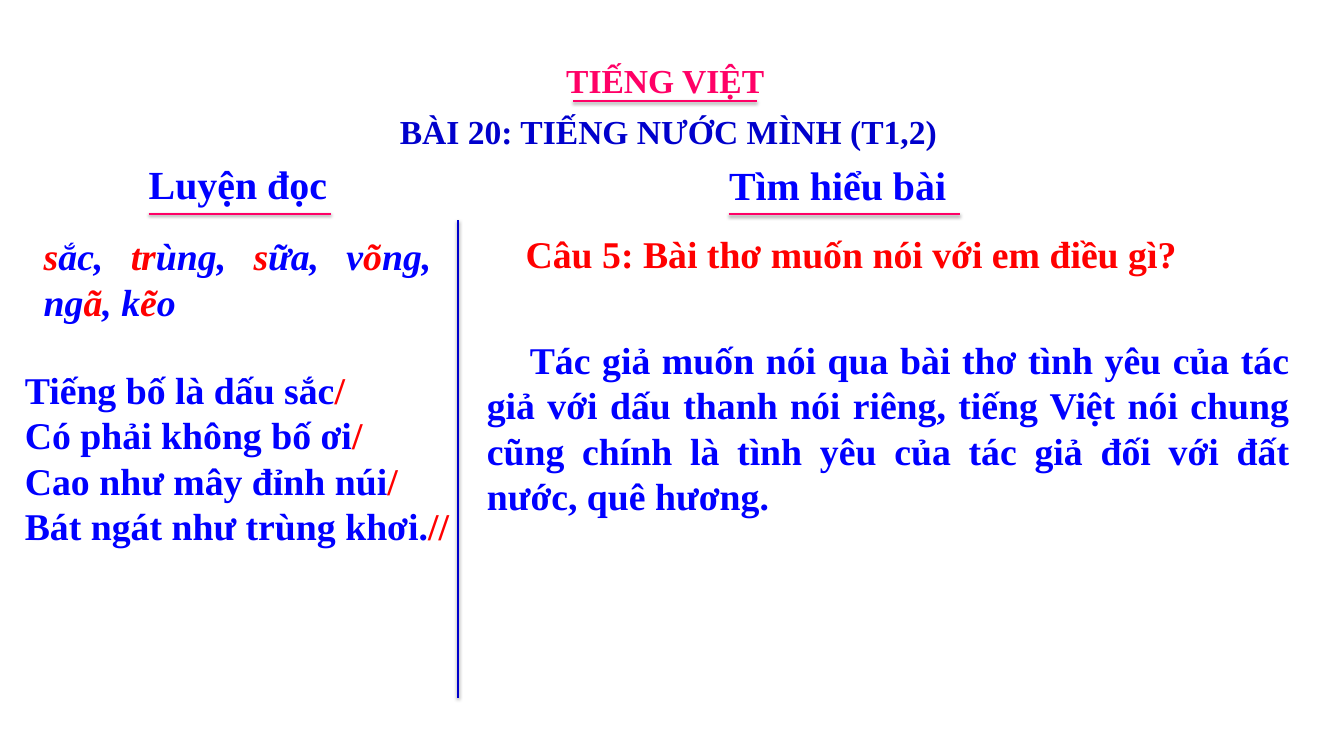
from lxml import etree
from pptx import Presentation
from pptx import util as u
from pptx.dml.color import RGBColor
from pptx.enum import shapes, text
from pptx.oxml.ns import qn

THEME = {
    "font": "Times New Roman",
    "pink": RGBColor(0xFF, 0x00, 0x66),
    "navy": RGBColor(0x00, 0x00, 0xCC),
    "blue": RGBColor(0x00, 0x00, 0xFF),
    "red": RGBColor(0xFF, 0x00, 0x00),
    "title": u.Pt(32),
    "heading": u.Pt(38),
    "body": u.Pt(36),
}
LEFT, CENTER, JUSTIFY = text.PP_ALIGN.LEFT, text.PP_ALIGN.CENTER, text.PP_ALIGN.JUSTIFY


def write(shape, lines, size, color, align=LEFT, inset=(7.2, 3.6), indent=0, wrap=True, italic=False):
    """Write lines into a shape; parts between asterisks are red."""
    frame = shape.text_frame
    side, edge = (u.Pt(value) for value in inset)
    frame_format = {
        "margin_left": side, "margin_right": side,
        "margin_top": edge, "margin_bottom": edge,
        "word_wrap": wrap, "vertical_anchor": text.MSO_ANCHOR.TOP,
        "auto_size": text.MSO_AUTO_SIZE.SHAPE_TO_FIT_TEXT,
    }
    for name, value in frame_format.items():
        setattr(frame, name, value)
    for number, line in enumerate(lines):
        paragraph = frame.add_paragraph() if number else frame.paragraphs[0]
        paragraph.alignment = align
        if indent:
            properties = paragraph._p.get_or_add_pPr()
            properties.set("marL", "0")
            properties.set("indent", str(u.Pt(indent)))
        for part, words in enumerate(line.split("*")):
            if not words:
                continue
            run = paragraph.add_run()
            run.text = words
            run_format = {"name": THEME["font"], "size": THEME[size], "bold": True, "italic": italic}
            for name, value in run_format.items():
                setattr(run.font, name, value)
            run.font.color.rgb = THEME["red" if part % 2 else color]


presentation = Presentation()
presentation.slide_width, presentation.slide_height = u.Pt(1281.6), u.Pt(720)
slide = presentation.slides.add_slide(presentation.slide_layouts[5])

# Lesson title
title = slide.shapes.title
title_place = {"left": 358.6, "top": 100.1, "width": 558, "height": 50.4}
for name, value in title_place.items():
    setattr(title, name, u.Pt(value))
write(title, ["BÀI 20: TIẾNG NƯỚC MÌNH (T1,2)"], "title", "navy", CENTER, inset=(11.5, 5.75))

# Subject, column headings and column texts: place, lines, format
reading_words = "*s*ắc, *tr*ùng, *s*ữa, v*õ*ng, ng*ã*, k*ẽ*o"
poem = [
    "Tiếng bố là dấu sắc*/*",
    "Có phải không bố ơi*/*",
    "Cao như mây đỉnh núi*/*",
    "Bát ngát như trùng khơi.*//*",
]
question = "Câu 5: Bài thơ muốn nói với em điều gì?"
answer = (
    "Tác giả muốn nói qua bài thơ tình yêu của tác giả với dấu thanh nói riêng, "
    "tiếng Việt nói chung cũng chính là tình yêu của tác giả đối với đất nước, quê hương."
)
heading = {"size": "heading", "color": "blue", "align": CENTER, "inset": (5.75, 2.9), "wrap": False}
body = {"size": "body", "color": "blue"}
boxes = [
    ((532.8, 54, 205.2, 46), ["TIẾNG VIỆT"], {"size": "title", "color": "pink", "wrap": False}),
    ((135.4, 149, 182.9, 51.8), ["Luyện đọc"], heading),
    ((689, 150.5, 219.6, 51.8), ["Tìm hiểu bài"], heading),
    ((34.6, 218.9, 383.8, 94.3), [reading_words], body | {"align": JUSTIFY, "italic": True}),
    ((16.6, 346.3, 432, 181.4), poem, body),
    ((448.6, 216.7, 804.2, 51.1), [question], body | {"color": "red", "indent": 45.5}),
    ((457.2, 317.5, 779.8, 181.4), [answer], body | {"align": JUSTIFY, "indent": 41}),
]
for place, lines, box_format in boxes:
    box = slide.shapes.add_textbox(*(u.Pt(value) for value in place))
    write(box, lines, **box_format)

# Underlines and column divider, each with a soft shadow
rules = [
    ((546.5, 96.5, 722.2, 96.5), "pink"),
    ((141.8, 204, 315.4, 204), "pink"),
    ((694.8, 204.2, 915.8, 204.2), "pink"),
    ((437, 210.2, 437, 665.3), "navy"),
]
for ends, color in rules:
    rule = slide.shapes.add_connector(shapes.MSO_CONNECTOR.STRAIGHT, *(u.Pt(value) for value in ends))
    rule.line.color.rgb = THEME[color]
    rule.line.width = u.Pt(2)
    effects = etree.SubElement(rule._element.spPr, qn("a:effectLst"))
    shadow = etree.SubElement(
        effects, qn("a:outerShdw"), blurRad=str(u.Pt(3.1)), dist=str(u.Pt(1.6)),
        dir="5400000", rotWithShape="0",
    )
    shadow_color = etree.SubElement(shadow, qn("a:srgbClr"), val="000000")
    etree.SubElement(shadow_color, qn("a:alpha"), val="38000")

presentation.save("out.pptx")
